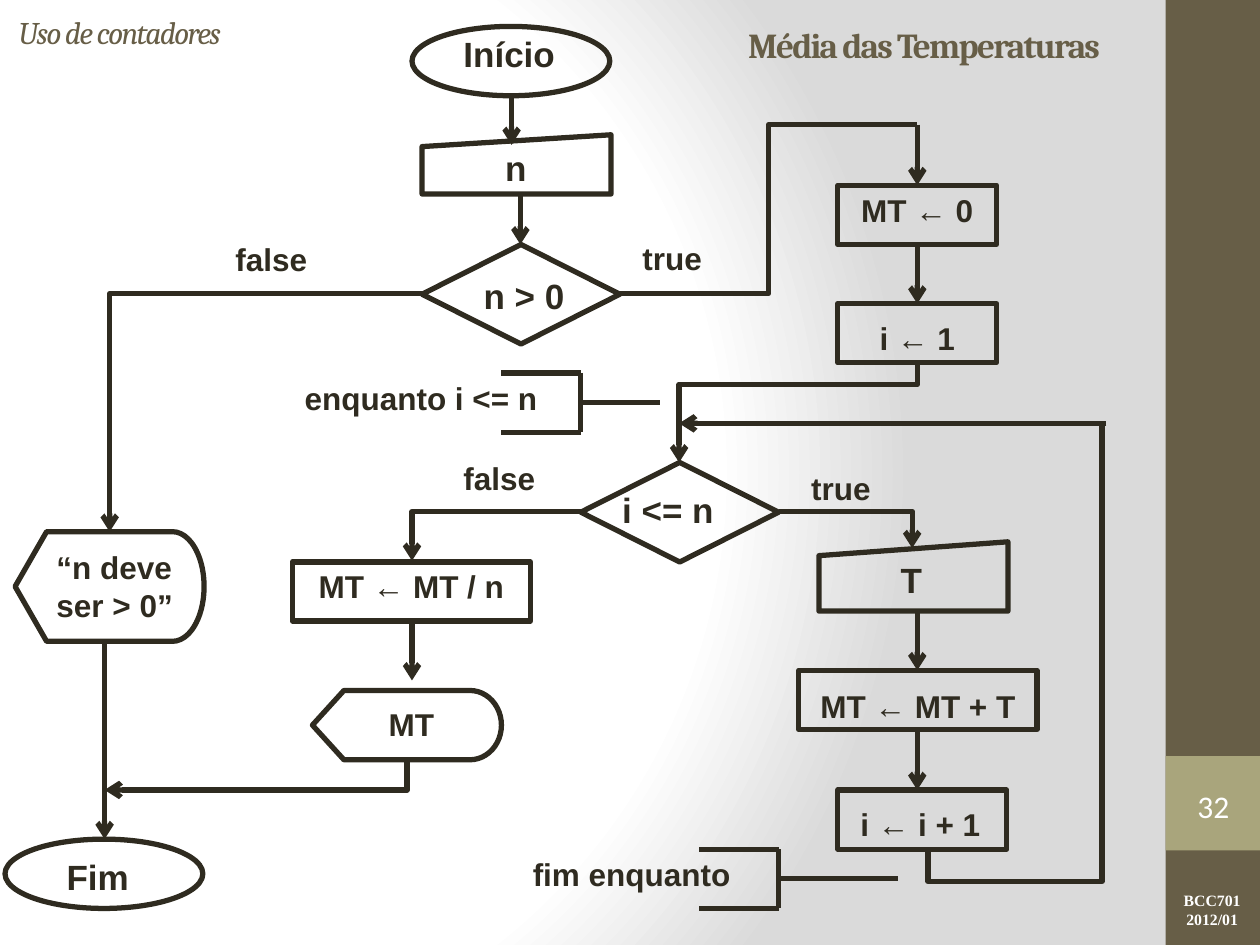
from dataclasses import dataclass

from lxml.etree import SubElement
from pptx import Presentation
from pptx.dml.color import RGBColor
from pptx.enum.shapes import MSO_CONNECTOR as Connector, MSO_SHAPE as Shape
from pptx.enum.text import MSO_ANCHOR as Anchor, MSO_AUTO_SIZE as AutoSize, PP_ALIGN as Align
from pptx.oxml import parse_xml
from pptx.oxml.ns import nsdecls, qn
from pptx.util import Inches, Pt

COLORS = {"ink": "2F2B20", "brown": "675E47", "olive": "A9A57C",
          "white": "FFFFFF", "grey": "DADADA"}
LINE_WIDTH = Pt(3)


@dataclass
class Node:
    kind: Shape
    box: tuple


@dataclass
class Label:
    text: str
    box: tuple
    size: int = 18
    align: Align = Align.LEFT
    font: str = "Arial"
    color: str = "ink"
    bold: bool = True
    italic: bool = False
    anchor: Anchor = Anchor.TOP


@dataclass
class Elbow:
    """Bent connector: box before rotation, preset, rotation, flips, bend."""
    box: tuple
    preset: str
    rotation: int = 0
    flips: str = ""
    bend: float | None = None
    arrow: bool = True


def rgb(name: str) -> RGBColor:
    return RGBColor.from_string(COLORS[name])


def add_shape(slide, kind: Shape, box: tuple, fill: str = "", line: str = ""):
    shape = slide.shapes.add_shape(kind, *map(Inches, box))
    shape.shadow.inherit = False
    if fill:
        shape.fill.solid()
        shape.fill.fore_color.rgb = rgb(fill)
    else:
        shape.fill.background()
    if line:
        shape.line.color.rgb = rgb(line)
        shape.line.width = LINE_WIDTH
    else:
        shape.line.fill.background()
    return shape


def write(frame, label: Label) -> None:
    frame.word_wrap = True
    frame.vertical_anchor = label.anchor
    frame.text = label.text
    for paragraph in frame.paragraphs:
        paragraph.alignment = label.align
        font = paragraph.font
        font.name, font.size = label.font, Pt(label.size)
        font.bold, font.italic = label.bold, label.italic
        font.color.rgb = rgb(label.color)


def add_label(slide, label: Label):
    text_box = slide.shapes.add_textbox(*map(Inches, label.box))
    write(text_box.text_frame, label)
    text_box.text_frame.auto_size = AutoSize.NONE
    return text_box


def tighten(frame) -> None:
    for run in frame.paragraphs[0].runs:
        run.font._element.set("spc", "-100")


def add_line(slide, start: tuple, end: tuple, arrow: bool = False,
             kind: Connector = Connector.STRAIGHT):
    connector = slide.shapes.add_connector(kind, *map(Inches, start + end))
    connector.line.color.rgb = rgb("ink")
    connector.line.width = LINE_WIDTH
    properties = connector._element.spPr
    if arrow:
        SubElement(properties.find(qn("a:ln")), qn("a:tailEnd"), type="arrow")
    SubElement(properties, qn("a:effectLst"))
    return connector


def add_elbow(slide, elbow: Elbow) -> None:
    left, top, width, height = elbow.box
    connector = add_line(slide, (left, top), (left + width, top + height),
                         elbow.arrow, Connector.ELBOW)
    properties = connector._element.spPr
    transform = properties.find(qn("a:xfrm"))
    transform.set("rot", str(elbow.rotation * 60000))
    for flip in elbow.flips:
        transform.set("flip" + flip, "1")
    geometry = properties.find(qn("a:prstGeom"))
    geometry.set("prst", elbow.preset)
    if elbow.bend is not None:
        SubElement(geometry.find(qn("a:avLst")), qn("a:gd"), name="adj1",
                   fmla=f"val {round(elbow.bend * 100000)}")


def add_annotation(slide, left: float, top: float, stem_end: float) -> None:
    """Open bracket with a stem at its middle."""
    right, bottom = left + 0.63, top + 0.47
    middle = (top + bottom) / 2
    add_line(slide, (right, top), (right, bottom))
    for y in (top, bottom):
        add_line(slide, (left, y), (right, y))
    add_line(slide, (right, middle), (stem_end, middle))


def set_background(slide) -> None:
    slide.background.fill.solid()
    properties = slide._element.cSld.find(qn("p:bg")).find(qn("p:bgPr"))
    stops = "".join(
        f'<a:gs pos="{position * 1000}"><a:srgbClr val="{COLORS[name]}"/></a:gs>'
        for position, name in ((0, "white"), (75, "white"), (100, "grey")))
    gradient = parse_xml(
        f'<a:gradFill {nsdecls("a")} rotWithShape="1"><a:gsLst>{stops}</a:gsLst>'
        '<a:path path="circle"><a:fillToRect l="20000" t="50000" r="100000" b="50000"/>'
        '</a:path></a:gradFill>')
    properties.replace(properties[0], gradient)


NODES = [
    Node(Shape.OVAL, (3.27, 0.21, 1.57, 0.55)),
    Node(Shape.OVAL, (0.04, 6.66, 1.57, 0.55)),
    Node(Shape.FLOWCHART_MANUAL_INPUT, (3.35, 1.07, 1.5, 0.47)),
    Node(Shape.FLOWCHART_MANUAL_INPUT, (6.5, 4.3, 1.5, 0.55)),
    Node(Shape.FLOWCHART_DECISION, (3.35, 1.94, 1.57, 0.79)),
    Node(Shape.FLOWCHART_DECISION, (4.61, 3.67, 1.57, 0.79)),
    Node(Shape.FLOWCHART_DISPLAY, (0.12, 4.22, 1.5, 0.87)),
    Node(Shape.FLOWCHART_DISPLAY, (2.48, 5.48, 1.5, 0.55)),
    Node(Shape.RECTANGLE, (6.65, 1.47, 1.26, 0.47)),
    Node(Shape.RECTANGLE, (6.65, 2.41, 1.26, 0.47)),
    Node(Shape.RECTANGLE, (6.34, 5.32, 1.89, 0.47)),
    Node(Shape.RECTANGLE, (6.65, 6.27, 1.34, 0.47)),
    Node(Shape.RECTANGLE, (2.32, 4.46, 1.89, 0.47)),
]
LABELS = [
    Label("Início", (3.58, 0.21, 1.02, 0.44), 20),
    Label("Fim", (0.43, 6.74, 0.87, 0.44), 20),
    Label("n", (3.91, 1.11, 0.38, 0.44), 20),
    Label("T", (7.05, 4.38, 0.38, 0.44), 20),
    Label("n > 0", (3.74, 2.13, 0.87, 0.44), 20),
    Label("i <= n", (4.84, 3.83, 1.1, 0.44), 20),
    Label("“n deve\nser > 0”", (0.35, 4.3, 1.26, 0.71)),
    Label("MT", (2.95, 5.55, 0.63, 0.4), align=Align.CENTER),
    Label("MT ← 0", (6.73, 1.47, 1.1, 0.4), align=Align.CENTER),
    Label("i ← 1", (6.81, 2.48, 0.94, 0.4), align=Align.CENTER),
    Label("MT ← MT + T", (6.34, 5.4, 1.89, 0.4), align=Align.CENTER),
    Label("i ← i + 1", (6.73, 6.34, 1.34, 0.4)),
    Label("MT ← MT / n", (2.32, 4.45, 1.89, 0.4), align=Align.CENTER),
    Label("false", (1.77, 1.86, 0.87, 0.4)),
    Label("true", (5, 1.85, 0.87, 0.4)),
    Label("false", (3.58, 3.59, 0.87, 0.4)),
    Label("true", (6.34, 3.67, 0.87, 0.4)),
    Label("enquanto i <= n", (2.32, 2.96, 2.13, 0.4)),
    Label("fim enquanto", (4.13, 6.74, 1.89, 0.4)),
    Label("BCC701\n2012/01", (9.26, 7.02, 0.72, 0.4), 9, Align.CENTER,
          "Times New Roman", "white"),
]
# Vertical arrows: x, top, bottom
ARROWS = [(4.06, 0.76, 1.15), (4.13, 1.55, 1.94), (0.83, 5.09, 6.66),
          (3.27, 4.93, 5.4), (7.28, 0.99, 1.47), (7.28, 1.94, 2.41),
          (7.28, 4.85, 5.32), (7.28, 5.8, 6.27)]
ELBOWS = [
    Elbow((0.87, 2.33, 2.48, 1.89), "bentConnector2", 180, "V"),
    Elbow((4.92, 0.99, 2.36, 1.34), "bentConnector3", 0, "V", 0.5, False),
    Elbow((5.94, 2.33, 0.79, 1.89), "bentConnector3", 90, "", 0.215),
    Elbow((6.18, 4.06, 1.06, 0.29), "bentConnector2"),
    Elbow((6.36, 4.36, 3.39, 1.38), "bentConnector3", 90, "HV", -0.074, False),
    Elbow((3.27, 4.06, 1.34, 0.39), "bentConnector2", 180, "V"),
    Elbow((1.91, 4.95, 0.24, 2.4), "bentConnector2", 90),
]


def main() -> None:
    presentation = Presentation()
    presentation.slide_width, presentation.slide_height = Inches(10), Inches(7.5)
    slide = presentation.slides.add_slide(presentation.slide_layouts[5])
    set_background(slide)

    # Side band with the slide number
    add_shape(slide, Shape.RECTANGLE, (9.25, 0, 0.75, 7.5), "brown")
    add_shape(slide, Shape.RECTANGLE, (9.25, 6, 0.75, 0.75), "olive")
    number = Label("32", (9.33, 6.18, 0.6, 0.43), 18, Align.CENTER, "Calibri",
                   "white", False, anchor=Anchor.MIDDLE)
    frame = add_label(slide, number).text_frame
    frame.margin_left = frame.margin_right = frame.margin_top = frame.margin_bottom = 0

    # Title and subtitle
    heading = Label("Média das Temperaturas", (0.5, -0.03, 8.33, 0.77), 20,
                    Align.RIGHT, "Cambria", "brown", anchor=Anchor.MIDDLE)
    title = slide.shapes.title
    title.left, title.top, title.width, title.height = map(Inches, heading.box)
    write(title.text_frame, heading)
    tighten(title.text_frame)
    subtitle = Label("Uso de contadores", (0.05, 0.08, 8.32, 0.34), 18, Align.LEFT,
                     "Cambria", "brown", False, True, Anchor.MIDDLE)
    tighten(add_label(slide, subtitle).text_frame)

    # Flowchart
    for node in NODES:
        add_shape(slide, node.kind, node.box, line="ink")
    for label in LABELS:
        add_label(slide, label)
    for x, top, bottom in ARROWS:
        add_line(slide, (x, top), (x, bottom), arrow=True)
    for elbow in ELBOWS:
        add_elbow(slide, elbow)
    add_line(slide, (8.78, 3.36), (5.39, 3.36), arrow=True)
    add_annotation(slide, 3.98, 2.96, 5.24)
    add_annotation(slide, 5.55, 6.74, 7.13)

    presentation.save("out.pptx")


if __name__ == "__main__":
    main()
